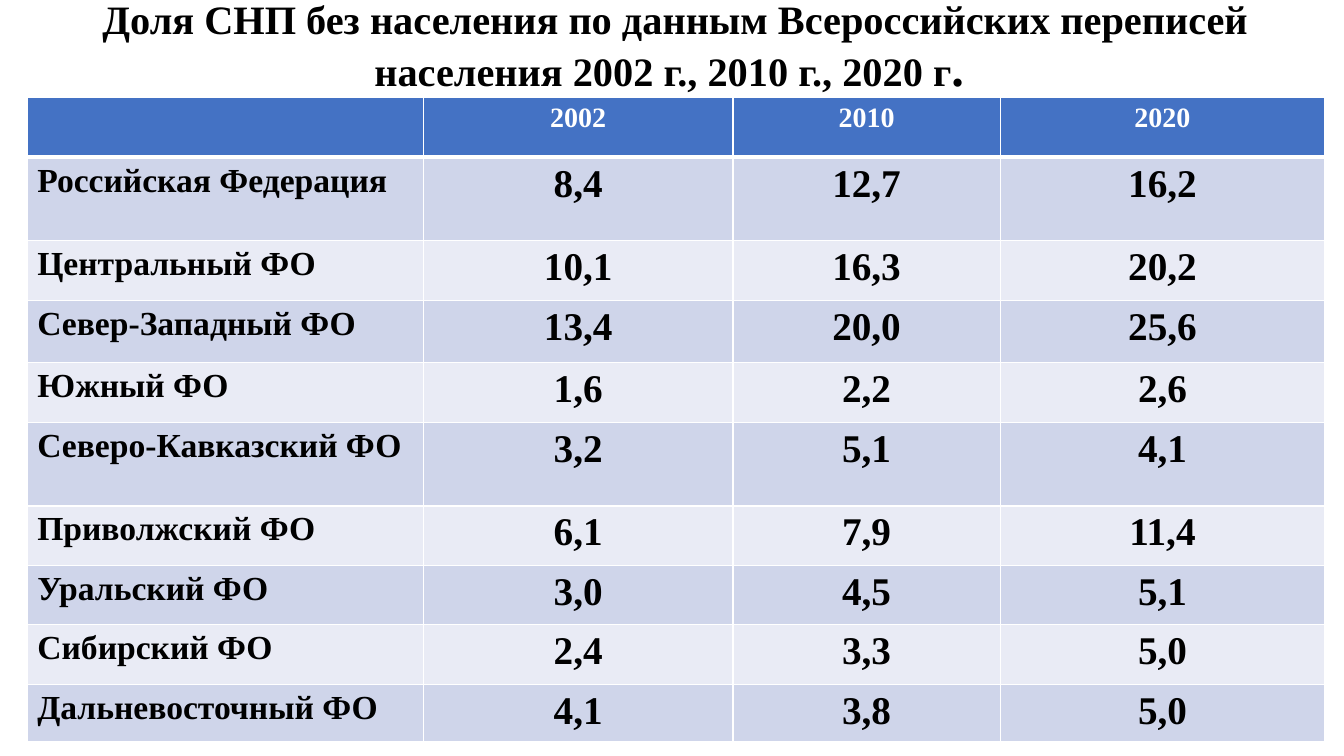
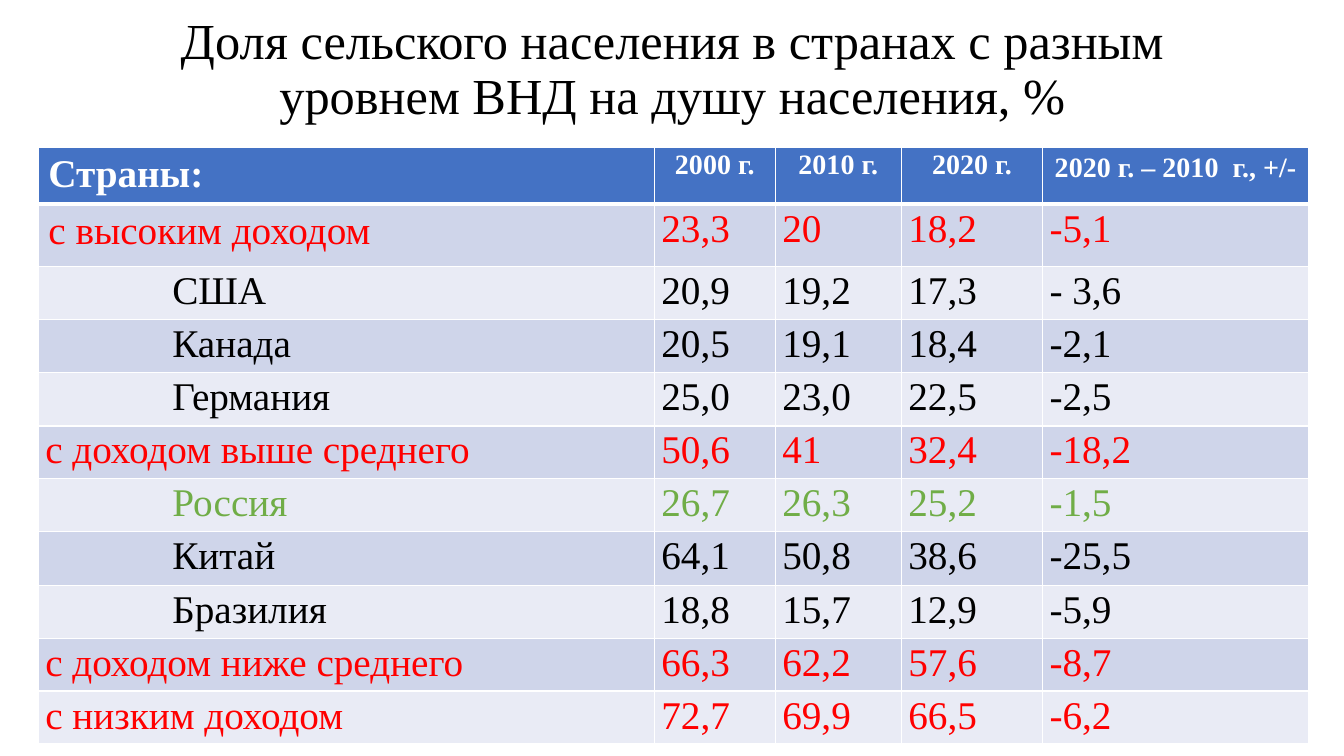
import pptx
import pptx.dml.color
import pptx.enum.text
import pptx.oxml
import pptx.oxml.ns
import pptx.util

Inches, Pt = pptx.util.Inches, pptx.util.Pt
ALIGN = pptx.enum.text.PP_ALIGN

# Shared look
FONT = "Times New Roman"
BLACK, WHITE, RED, GREEN = "000000", "FFFFFF", "FF0000", "70AD47"
HEADER, BANDS = "4472C4", ("CFD5EA", "E9EBF5")
COUNTRY_INDENT = 1.33

# Slide 1: settlements without population
EMPTY_TITLE = [("Доля СНП без населения по данным Всероссийских переписей "
                "населения 2002 г., 2010 г., 2020 г", 28.8), (". ", 36)]
EMPTY_ROWS = [
    ("", "2002", "2010", "2020"),
    ("Российская Федерация", "8,4", "12,7", "16,2"),
    ("Центральный ФО", "10,1", "16,3", "20,2"),
    ("Север-Западный ФО", "13,4", "20,0", "25,6"),
    ("Южный ФО", "1,6", "2,2", "2,6"),
    ("Северо-Кавказский ФО", "3,2", "5,1", "4,1"),
    ("Приволжский ФО", "6,1", "7,9", "11,4"),
    ("Уральский ФО", "3,0", "4,5", "5,1"),
    ("Сибирский ФО", "2,4", "3,3", "5,0"),
    ("Дальневосточный ФО", "4,1", "3,8", "5,0"),
]
EMPTY_COLS = [3.93, 3.07, 2.65, 3.22]
EMPTY_HEIGHTS = [0.59, 0.83, 0.59, 0.62, 0.59, 0.83, 0.59, 0.59, 0.59, 0.55]

# Slide 2: rural population by income group
RURAL_TITLE = [("Доля сельского населения в странах с разным уровнем ВНД "
                "на душу населения, %", 36)]
RURAL_ROWS = [
    ("Страны:", "2000 г.", "2010 г.", "2020 г.", "2020 г. – 2010  г., +/-"),
    ("с высоким доходом", "23,3", "20", "18,2", "-5,1"),
    ("США", "20,9", "19,2", "17,3", "- 3,6"),
    ("Канада", "20,5", "19,1", "18,4", "-2,1"),
    ("Германия", "25,0", "23,0", "22,5", "-2,5"),
    ("с доходом выше среднего", "50,6", "41", "32,4", "-18,2"),
    ("Россия", "26,7", "26,3", "25,2", "-1,5"),
    ("Китай", "64,1", "50,8", "38,6", "-25,5"),
    ("Бразилия", "18,8", "15,7", "12,9", "-5,9"),
    ("с доходом ниже среднего", "66,3", "62,2", "57,6", "-8,7"),
    ("с низким доходом", "72,7", "69,9", "66,5", "-6,2"),
]
RURAL_COLS = [6.11, 1.2, 1.25, 1.4, 2.64]
RURAL_HEIGHTS = [0.48, 0.62, 0.52, 0.53, 0.53, 0.52, 0.53, 0.53, 0.53, 0.52, 0.52]


def rgb(color):
    return pptx.dml.color.RGBColor.from_string(color)


def set_font(font, size, color=BLACK, bold=False):
    font.name, font.size, font.bold = FONT, Pt(size), bold
    font.color.rgb = rgb(color)


def add_title(slide, runs, box, bold):
    tf = slide.shapes.add_textbox(*map(Inches, box)).text_frame
    tf.word_wrap = True
    tf.vertical_anchor = pptx.enum.text.MSO_ANCHOR.MIDDLE
    p = tf.paragraphs[0]
    p.alignment, p.line_spacing = ALIGN.CENTER, 0.9
    for text, size in runs:
        r = p.add_run()
        r.text = text
        set_font(r.font, size, bold=bold)


def set_borders(cell, row):
    """White grid with a thicker rule under the header."""
    widths = {"L": 1, "R": 1, "T": 3 if row == 1 else 1, "B": 3 if row == 0 else 1}
    tc_pr = cell._tc.get_or_add_tcPr()
    for side, width in widths.items():
        tc_pr.append(pptx.oxml.parse_xml(
            f'<a:ln{side} {pptx.oxml.ns.nsdecls("a")} w="{Pt(width)}"><a:solidFill>'
            f'<a:srgbClr val="{WHITE}"/></a:solidFill></a:ln{side}>'))


def add_table(slide, rows, left, top, cols, heights, style_cell):
    box = map(Inches, (left, top, sum(cols), sum(heights)))
    table = slide.shapes.add_table(len(rows), len(cols), *box).table
    for column, width in zip(table.columns, cols):
        column.width = Inches(width)
    for i, (values, height) in enumerate(zip(rows, heights)):
        table.rows[i].height = Inches(height)
        for j, text in enumerate(values):
            cell = table.cell(i, j)
            set_borders(cell, i)
            cell.fill.solid()
            cell.fill.fore_color.rgb = rgb(BANDS[(i - 1) % 2] if i else HEADER)
            cell.text = text
            style_cell(cell, cell.text_frame.paragraphs[0], i, j)


def style_empty(cell, p, i, j):
    size = 20 if i == 0 else 24 if j == 0 else 28
    set_font(p.font, size, BLACK if i else WHITE, bold=True)
    p.alignment = ALIGN.CENTER if j else ALIGN.LEFT


def style_rural(cell, p, i, j):
    name = RURAL_ROWS[i][0]
    is_group = name.startswith("с ")
    color = WHITE if i == 0 else RED if is_group else GREEN if name == "Россия" else BLACK
    set_font(p.font, 20 if i == 0 and j else 28, color, bold=i == 0)
    p.alignment = ALIGN.CENTER if i == 0 and j else ALIGN.LEFT
    # Three cells keep the default margins and spacing
    if (i, j) in ((0, 0), (0, 4), (1, 0)):
        return
    p.line_spacing, p.space_after = 1.07, Pt(8)
    cell.margin_top = cell.margin_bottom = 0
    cell.margin_right = Inches(0.07)
    is_country = i and j == 0 and not is_group
    cell.margin_left = Inches(COUNTRY_INDENT if is_country else 0.07)


def main():
    prs = pptx.Presentation()
    prs.slide_width, prs.slide_height = Inches(13.33), Inches(7.5)
    blank = prs.slide_layouts[6]

    s = prs.slides.add_slide(blank)
    add_title(s, EMPTY_TITLE, (0.27, 0, 12.86, 0.97), bold=True)
    add_table(s, EMPTY_ROWS, 0.27, 0.97, EMPTY_COLS, EMPTY_HEIGHTS, style_empty)

    s = prs.slides.add_slide(blank)
    add_title(s, RURAL_TITLE, (0.92, 0.4, 11.5, 0.6), bold=False)
    add_table(s, RURAL_ROWS, 0.38, 1.46, RURAL_COLS, RURAL_HEIGHTS, style_rural)

    prs.save("out.pptx")


if __name__ == "__main__":
    main()
